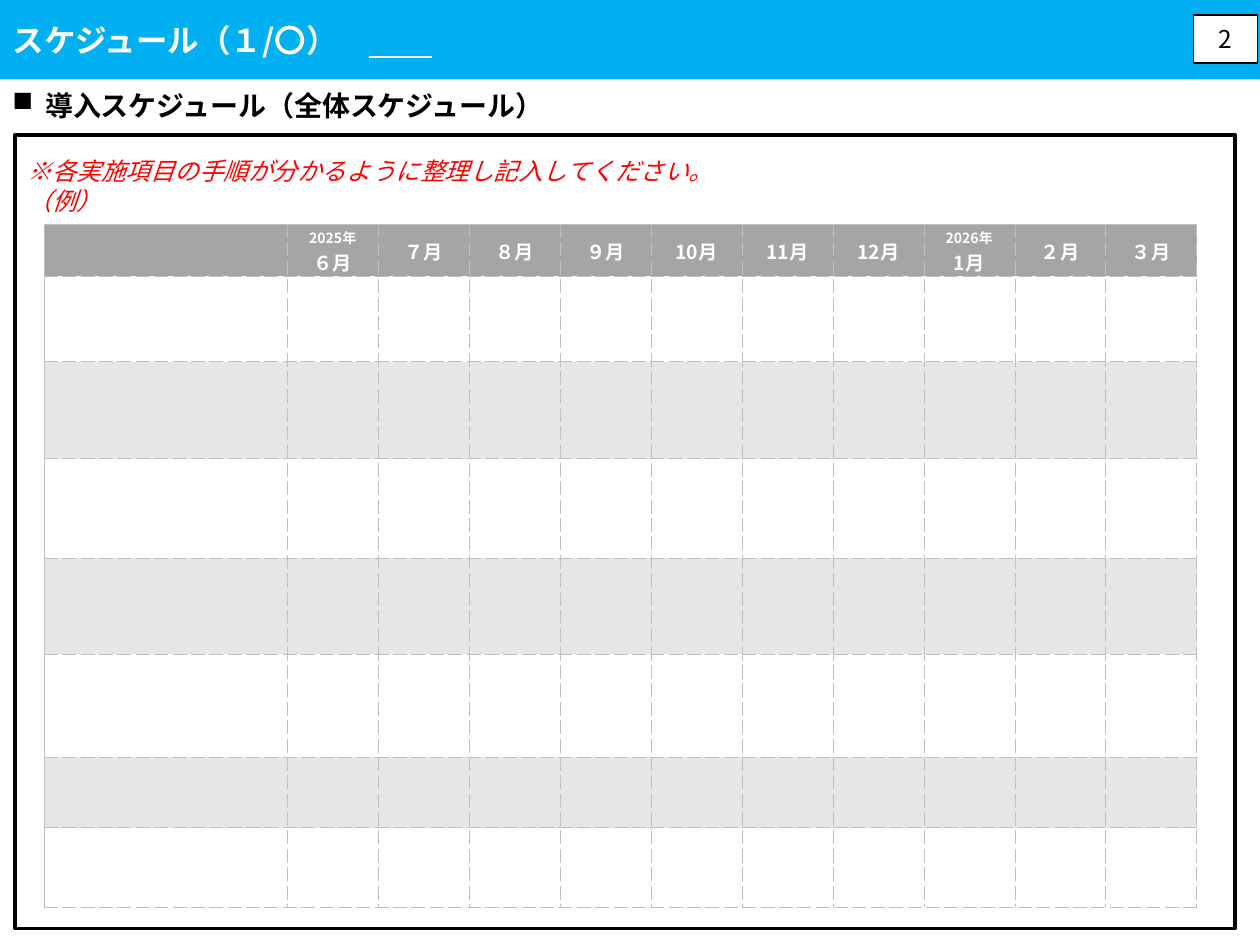
from lxml import etree
from pptx import Presentation
from pptx import util as u
from pptx.dml.color import RGBColor
from pptx.enum import shapes, text
from pptx.oxml.ns import qn

# Content
TITLE = ["スケジュール（１/〇）　", "　　"]  # the second run is an underlined blank
HEADING = "導入スケジュール（全体スケジュール）"
NOTE = "※各実施項目の手順が分かるように整理し記入してください。\n（例）"
MONTHS = ["", "2025年\n６月", "７月", "８月", "９月", "10月", "11月", "12月",
          "2026年\n1月", "２月", "３月"]
PAGE = "2"

# Grid, in inches
TABLE = (0.35, 1.78, 9.15, 5.42)
LABEL_W = 1.93
ROW_H = [0.41, 0.68, 0.77, 0.79, 0.76, 0.82, 0.56, 0.63]

FONT = "Noto Sans CJK JP"
BLUE = RGBColor(0x00, 0xB0, 0xF0)
BLACK = RGBColor(0x00, 0x00, 0x00)
WHITE = RGBColor(0xFF, 0xFF, 0xFF)
RED = RGBColor(0xFF, 0x00, 0x00)
HEADER = RGBColor(0xA5, 0xA5, 0xA5)
BAND = RGBColor(0xE7, 0xE6, 0xE6)
GRID = RGBColor(0xBF, 0xBF, 0xBF)


def inches(*values):
    return [u.Inches(v) for v in values]


def set_font(r, size, color, bold=False, italic=False):
    f = r.font
    f.name, f.size, f.bold, f.italic = FONT, u.Pt(size), bold, italic
    f.color.rgb = color
    etree.SubElement(r._r.get_or_add_rPr(), qn("a:ea"), typeface=FONT)


def add_text(s, box, content, size, color, **style):
    sp = s.shapes.add_textbox(*inches(*box))
    tf = sp.text_frame
    tf.word_wrap = True
    tf.text = content
    for p in tf.paragraphs:
        set_font(p.runs[0], size, color, **style)
    return tf


def add_box(s, box, line_width):
    sp = s.shapes.add_shape(shapes.MSO_SHAPE.RECTANGLE, *inches(*box))
    sp.shadow.inherit = False
    sp.fill.background()
    sp.line.color.rgb = BLACK
    sp.line.width = u.Pt(line_width)
    return sp


def set_border(cell, side, dash):
    ln = etree.SubElement(cell._tc.get_or_add_tcPr(), qn("a:ln" + side),
                          w=str(u.Pt(0.25)))
    fill = etree.SubElement(ln, qn("a:solidFill"))
    etree.SubElement(fill, qn("a:srgbClr"), val=str(GRID))
    etree.SubElement(ln, qn("a:prstDash"), val=dash)


def add_schedule(s):
    rows, cols = len(ROW_H), len(MONTHS)
    table = s.shapes.add_table(rows, cols, *inches(*TABLE)).table
    month_w = (TABLE[2] - LABEL_W) / (cols - 1)
    for i, col in enumerate(table.columns):
        col.width = u.Inches(month_w if i else LABEL_W)
    for i, row in enumerate(table.rows):
        row.height = u.Inches(ROW_H[i])
        for j, cell in enumerate(row.cells):
            # Solid on the outer left and top edges, dashed elsewhere
            for side in "LRTB":
                solid = (side == "L" and j == 0) or (side == "T" and i == 0)
                set_border(cell, side, "solid" if solid else "sysDash")
            cell.fill.solid()
            cell.fill.fore_color.rgb = HEADER if i == 0 else WHITE if i % 2 else BAND
    for cell, month in zip(table.rows[0].cells, MONTHS):
        cell.text = month
        cell.vertical_anchor = text.MSO_ANCHOR.MIDDLE
        cell.margin_top, cell.margin_bottom = u.Inches(0.02), 0
        for p in cell.text_frame.paragraphs:
            p.alignment = text.PP_ALIGN.CENTER
            for r in p.runs:
                set_font(r, 8 if "年" in r.text else 11, WHITE, bold=True)


def main():
    prs = Presentation()
    prs.slide_width, prs.slide_height = inches(10, 7.5)
    s = prs.slides.add_slide(prs.slide_layouts[5])

    # Title band
    sp = s.shapes.title
    sp.left, sp.top, sp.width, sp.height = inches(0, 0, 10, 0.63)
    sp.fill.solid()
    sp.fill.fore_color.rgb = BLUE
    tf = sp.text_frame
    tf.auto_size = text.MSO_AUTO_SIZE.NONE
    tf.vertical_anchor = text.MSO_ANCHOR.MIDDLE
    p = tf.paragraphs[0]
    p.alignment = text.PP_ALIGN.LEFT
    for part in TITLE:
        r = p.add_run()
        r.text = part
        set_font(r, 18, WHITE, bold=True)
    r.font.underline = True

    # Frame, heading and note
    add_box(s, (0.12, 1.07, 9.68, 6.3), 2.25)
    tf = add_text(s, (0, 0.65, 8.15, 0.37), HEADING, 16, BLACK, bold=True)
    pPr = tf.paragraphs[0]._p.get_or_add_pPr()
    pPr.set("marL", str(u.Inches(0.26)))
    pPr.set("indent", str(u.Inches(-0.26)))
    etree.SubElement(pPr, qn("a:buChar"), char="■")
    add_text(s, (0.12, 1.19, 9.53, 0.57), NOTE, 14, RED, italic=True)

    add_schedule(s)

    # Page number
    sp = add_box(s, (9.47, 0.12, 0.51, 0.38), 0.75)
    sp.fill.solid()
    sp.fill.fore_color.rgb = WHITE
    tf = sp.text_frame
    tf.text = PAGE
    tf.vertical_anchor = text.MSO_ANCHOR.MIDDLE
    tf.paragraphs[0].alignment = text.PP_ALIGN.CENTER
    set_font(tf.paragraphs[0].runs[0], 14, BLACK)

    prs.save("out.pptx")


if __name__ == "__main__":
    main()
